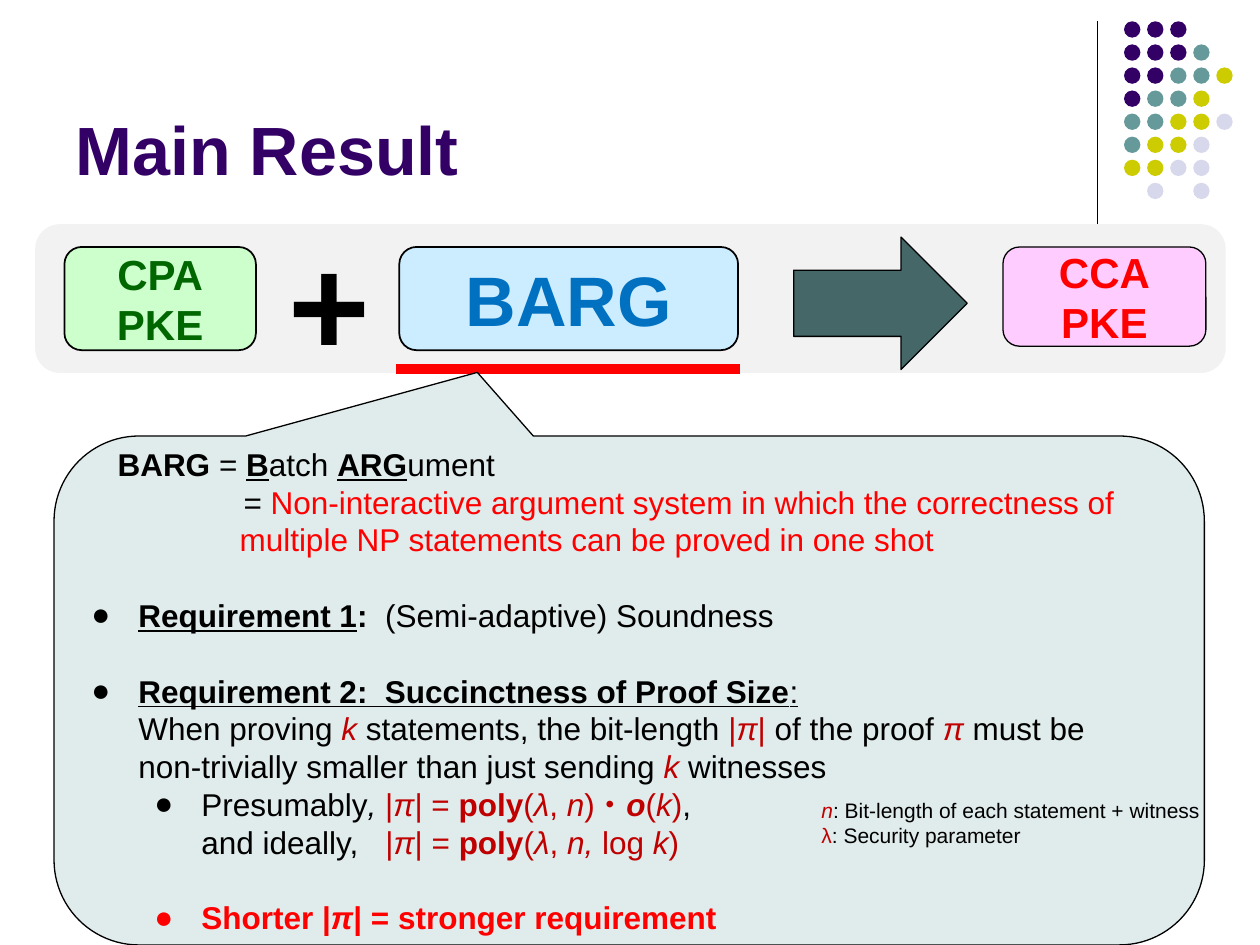
import pptx
import pptx.util
from lxml import etree
from pptx.dml.color import RGBColor
from pptx.enum.shapes import MSO_CONNECTOR, MSO_SHAPE
from pptx.enum.text import MSO_ANCHOR, PP_ALIGN
from pptx.oxml.ns import qn

Cm, Pt = pptx.util.Cm, pptx.util.Pt

BLACK = RGBColor(0x00, 0x00, 0x00)
RED = RGBColor(0xFF, 0x00, 0x00)
DARK_RED = RGBColor(0xC0, 0x00, 0x00)
PURPLE = RGBColor(0x33, 0x00, 0x66)
TEAL = RGBColor(0x66, 0x99, 0x99)
OLIVE = RGBColor(0xCC, 0xCC, 0x00)
LAVENDER = RGBColor(0xD8, 0xD8, 0xEC)
BAND_GRAY = RGBColor(0xF2, 0xF2, 0xF2)
LIGHT_GREEN = RGBColor(0xCC, 0xFF, 0xCC)
GREEN = RGBColor(0x00, 0x66, 0x00)
LIGHT_BLUE = RGBColor(0xCC, 0xEC, 0xFF)
BLUE = RGBColor(0x00, 0x70, 0xC0)
PINK = RGBColor(0xFF, 0xCC, 0xFF)
ARROW_TEAL = RGBColor(0x45, 0x67, 0x67)
CALLOUT_FILL = RGBColor(0xE0, 0xEB, 0xEB)

DOT_COLORS = {"P": PURPLE, "T": TEAL, "Y": OLIVE, "L": LAVENDER}
DOT_ROWS = ["PPP", "PPPT", "PPTTY", "PTTY", "TTYYL", "TYYL", "YYLL", " L L"]


def add_shape(s, kind, box, fill, line_width=None):
    sp = s.shapes.add_shape(kind, *map(Cm, box))
    sp.shadow.inherit = False
    sp.fill.solid()
    sp.fill.fore_color.rgb = fill
    if line_width:
        sp.line.color.rgb = BLACK
        sp.line.width = Pt(line_width)
    else:
        sp.line.fill.background()
    return sp


def add_line(s, x1, y1, x2, y2, color, width):
    line = s.shapes.add_connector(MSO_CONNECTOR.STRAIGHT, *map(Cm, (x1, y1, x2, y2)))
    line.line.color.rgb = color
    line.line.width = Pt(width)
    etree.SubElement(line._element.spPr, qn("a:effectLst"))


def add_runs(p, runs, size):
    """Each run is (text, style letters out of b, i, u, colour)."""
    for text, style, color in runs:
        for n, part in enumerate(text.split("\n")):
            if n:
                p.add_line_break()
            if not part:
                continue
            r = p.add_run()
            r.text = part
            r.font.name = "Arial"
            r.font.size = Pt(size)
            r.font.bold = "b" in style
            r.font.italic = "i" in style
            r.font.underline = "u" in style
            r.font.color.rgb = color


def indent(p, left, first, bullet=False, tab=None):
    pPr = p._p.get_or_add_pPr()
    pPr.set("marL", str(Cm(left)))
    pPr.set("indent", str(Cm(first)))
    if bullet:
        etree.SubElement(pPr, qn("a:buFont"), typeface="Arial")
        etree.SubElement(pPr, qn("a:buChar"), char="●")
    if tab:
        tabs = etree.SubElement(pPr, qn("a:tabLst"))
        etree.SubElement(tabs, qn("a:tab"), pos=str(Cm(tab)), algn="l")


def add_dots(s, left, top, pitch, size):
    for row, codes in enumerate(DOT_ROWS):
        for col, code in enumerate(codes):
            if code in DOT_COLORS:
                box = (left + col * pitch, top + row * pitch, size, size)
                add_shape(s, MSO_SHAPE.OVAL, box, DOT_COLORS[code])


def add_title(s, box):
    title = s.shapes.title
    title.left, title.top, title.width, title.height = map(Cm, box)
    tf = title.text_frame
    tf.vertical_anchor = MSO_ANCHOR.BOTTOM
    p = tf.paragraphs[0]
    p.alignment = PP_ALIGN.LEFT
    add_runs(p, [("Main Result", "b", PURPLE)], 39)


def add_card(s, box, text, size, color, fill, line_width):
    sp = add_shape(s, MSO_SHAPE.ROUNDED_RECTANGLE, box, fill, line_width)
    tf = sp.text_frame
    tf.word_wrap = False
    tf.vertical_anchor = MSO_ANCHOR.MIDDLE
    p = tf.paragraphs[0]
    p.alignment = PP_ALIGN.CENTER
    add_runs(p, [(text, "b", color)], size)


def add_equation(s, left, top, width, height):
    add_shape(s, MSO_SHAPE.ROUNDED_RECTANGLE, (left, top, width, height), BAND_GRAY)
    y = top + 0.46
    add_card(s, (left + 0.59, y, 3.86, 2.08), "CPA\nPKE", 24, GREEN, LIGHT_GREEN, 1)
    add_card(s, (left + 7.34, y, 6.83, 2.08), "BARG", 40, BLUE, LIGHT_BLUE, 1)
    add_card(s, (left + 19.51, y, 4.09, 2), "CCA\nPKE", 24, RED, PINK, 0.75)
    add_shape(s, MSO_SHAPE.RIGHT_ARROW, (left + 15.29, top + 0.26, 3.5, 2.67), ARROW_TEAL, 0.75)
    plus = s.shapes.add_textbox(Cm(left + 4.85), Cm(top - 0.28), Cm(2), Cm(3.68))
    plus.text_frame.word_wrap = True
    add_runs(plus.text_frame.paragraphs[0], [("+", "b", BLACK)], 80)
    add_line(s, left + 7.27, top + 2.92, left + 14.2, top + 2.92, RED, 6)


def add_callout(s, left, top, width, height):
    sp = add_shape(s, MSO_SHAPE.ROUNDED_RECTANGULAR_CALLOUT,
                   (left, top, width, height), CALLOUT_FILL, 0.75)
    for n, value in enumerate((-0.132, -0.625, 0.167)):
        sp.adjustments[n] = value
    tf = sp.text_frame
    tf.word_wrap = True
    tf.vertical_anchor = MSO_ANCHOR.MIDDLE

    # Runs, indents and whether a gap of one line comes before
    proof_size = [("|", "", DARK_RED), ("π", "i", DARK_RED), ("| = ", "", DARK_RED),
                  ("poly", "b", DARK_RED), ("(", "", DARK_RED), ("λ", "i", DARK_RED),
                  (", ", "", DARK_RED)]
    item = dict(left=0.95, first=-0.95, bullet=True)
    subitem = dict(left=2.22, first=-0.95, bullet=True)
    paragraphs = [
        ([("BARG ", "b", BLACK), ("= ", "", BLACK), ("B", "bu", BLACK), ("atch ", "", BLACK),
          ("ARG", "bu", BLACK), ("ument", "", BLACK)], dict(left=0.53, first=0), False),
        ([("= ", "", BLACK),
          ("Non-interactive argument system in which the correctness of\n"
           "multiple NP statements can be proved in one shot", "", RED)],
         dict(left=2.99, first=0.08), False),
        ([("Requirement 1", "bu", BLACK), (":  ", "b", BLACK),
          ("(Semi-adaptive) Soundness", "", BLACK)], item, True),
        ([("Requirement 2:  Succinctness of Proof Size", "bu", BLACK), (":\n", "u", BLACK),
          ("When proving ", "", BLACK), ("k ", "i", DARK_RED),
          ("statements, the bit-length ", "", BLACK), ("|", "", DARK_RED),
          ("π", "i", DARK_RED), ("|", "", DARK_RED), (" of the proof ", "", BLACK),
          ("π ", "i", DARK_RED),
          ("must be\nnon-trivially smaller than just sending ", "", BLACK),
          ("k", "i", DARK_RED), (" witnesses", "", BLACK)], item, True),
        ([("Presumably", "", BLACK), (", ", "i", BLACK), *proof_size,
          ("n", "i", DARK_RED), (")・", "", DARK_RED), ("o", "bi", DARK_RED),
          ("(", "", DARK_RED), ("k", "i", DARK_RED), (")", "", DARK_RED),
          (",\nand ideally,\t", "", BLACK), *proof_size, ("n, ", "i", DARK_RED),
          ("log", "", DARK_RED), (" k", "i", DARK_RED), (")", "", DARK_RED)],
         dict(subitem, tab=5.93), False),
        ([("Shorter |", "b", RED), ("π", "bi", RED), ("| = stronger requirement", "b", RED)],
         subitem, True),
    ]
    for n, (runs, layout, gap) in enumerate(paragraphs):
        p = tf.add_paragraph() if n else tf.paragraphs[0]
        p.alignment = PP_ALIGN.LEFT
        p.level = 1 if layout["left"] == subitem["left"] else 0
        p.space_before = Pt(21.6 if gap else 0)
        indent(p, **layout)
        add_runs(p, runs, 18)


def add_legend(s, box):
    tf = s.shapes.add_textbox(*map(Cm, box)).text_frame
    tf.word_wrap = True
    add_runs(tf.paragraphs[0], [("n", "i", DARK_RED),
                                (": Bit-length of each statement + witness", "", BLACK)], 12)
    add_runs(tf.add_paragraph(), [("λ", "", DARK_RED), (": Security parameter", "", BLACK)], 12)


def main():
    prs = pptx.Presentation()
    prs.slide_width, prs.slide_height = Cm(25.4), Cm(19.05)
    s = prs.slides.add_slide(prs.slide_layouts[5])
    # Corner decoration and title
    add_line(s, 22.12, 0.43, 22.12, 4.65, BLACK, 0.75)
    add_dots(s, 22.66, 0.43, 0.465, 0.33)
    add_title(s, (1.27, 0.33, 20.96, 3.61))
    # Result as an equation, with the explanation below
    add_equation(s, 0.71, 4.52, 24, 3)
    add_callout(s, 1.09, 8.79, 23.19, 10.26)
    add_legend(s, (16.31, 15.95, 8.79, 1.27))
    prs.save("out.pptx")


if __name__ == "__main__":
    main()
